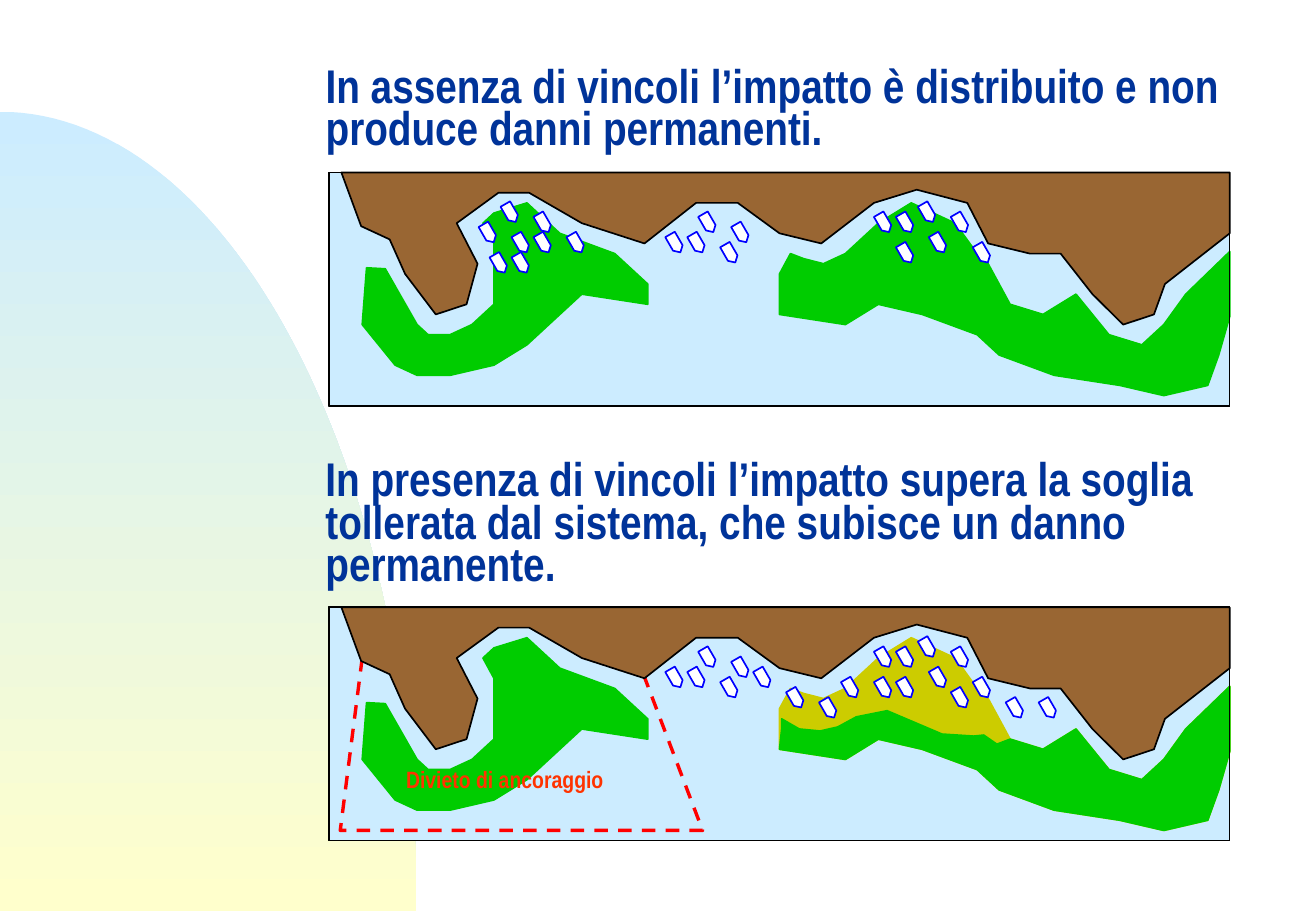
from math import cos, pi, sin

from pptx import Presentation
from pptx.dml.color import RGBColor
from pptx.enum.dml import MSO_LINE
from pptx.enum.shapes import MSO_SHAPE as SHAPE
from pptx.enum.text import MSO_ANCHOR as ANCHOR, MSO_AUTO_SIZE as FIT, PP_ALIGN as ALIGN
from pptx.util import Inches, Pt

color = RGBColor.from_string

PANEL_LEFT, PANEL_WIDTH, PANEL_HEIGHT = 2.71, 7.41, 1.92
COLUMN, ROW = PANEL_WIDTH / 82, PANEL_HEIGHT / 23
BOAT_LENGTH, BOAT_WIDTH = 0.17, 0.09
BLACK, BLUE, WATER, LAND = "000000", "0000FF", "CCECFF", "996633"
GREEN, OLIVE, RED, NAVY = "00CC00", "CCCC00", "FF0000", "003399"

coast = [(1.1, 0), (2.9, 5.3), (5.5, 6.6), (6.9, 10), (9.7, 14), (12.5, 13), (13.5, 9),
         (11.6, 5), (15.4, 2), (18.2, 2), (23, 5), (28.7, 7), (33.4, 3), (37.2, 3),
         (41, 6), (44.8, 7), (49.6, 3), (53.5, 1.7), (58.1, 3), (60, 7), (63.8, 8),
         (66.6, 8), (69.5, 12), (72.3, 15), (75.1, 14), (76.1, 11), (82, 6), (82, 0)]
west_meadow = [(5.1, 9.5), (8, 15), (9, 16), (11, 16), (13, 15), (15, 13), (15, 7), (14, 5),
               (15, 4), (18, 3), (21, 6), (26, 8), (29, 11), (29, 13), (23, 12), (21, 14),
               (18, 17), (15, 19), (11, 20), (8, 20), (6, 19), (3, 15), (3.4, 9.4)]
east_rim = [(41, 14), (47, 15), (50, 13), (54, 14), (59, 16), (61, 18), (66, 20), (72, 21),
            (76, 22), (80, 21), (81, 18), (82, 14.2), (82, 7.8), (78, 12), (76, 15),
            (74, 17), (71, 16), (68, 12), (65, 14), (62, 13)]
bay = [(60, 9), (59, 8), (57, 5), (55, 4), (53, 3), (50, 5), (47, 8), (45, 9), (43.2, 8.5),
       (42, 8), (41, 10)]
damage_edge = [(60.8, 13.5), (59.6, 12.6), (58.7, 12.7), (55.8, 12.5), (50.8, 10.2),
               (48, 10.8), (46.3, 11.8), (44.7, 12.2), (42.8, 12), (41.2, 11), (41.2, 12)]
no_anchor_zone = [(3, 5), (1, 22), (34, 22), (27, 2), (17, 1), (7, 3)]

common_boats = [(34, 5), (31, 7), (33, 7), (37, 6), (36, 8), (50, 5), (55, 7), (57, 5),
                (54, 4), (52, 5), (52, 8), (59, 8)]
free_boats = [(19, 5), (17, 7), (15, 9), (16, 4), (14, 6), (19, 7), (22, 7), (17, 9)]
moved_boats = [(65, 10), (62, 10), (57, 9), (42, 9), (39, 7), (47, 8), (50, 8), (45, 10)]

panels = [
    (1.42, common_boats + free_boats,
     [(east_rim + bay, GREEN, GREEN), (west_meadow, GREEN, GREEN), (coast, LAND, BLACK)]),
    (5, common_boats + moved_boats,
     [(east_rim + bay, OLIVE, OLIVE), (west_meadow, GREEN, GREEN),
      (east_rim + damage_edge, GREEN, GREEN), (no_anchor_zone, None, RED),
      (coast, LAND, BLACK)]),
]


def paint(shape, fill, line, width=1):
    shape.shadow.inherit = False
    if fill:
        shape.fill.solid()
        shape.fill.fore_color.rgb = color(fill)
    else:
        shape.fill.background()
    shape.line.color.rgb = color(line)
    shape.line.width = Pt(width)


def write(box, text, size, ink, align, spacing):
    frame = box.text_frame
    frame.word_wrap = True
    frame.auto_size = FIT.NONE
    frame.vertical_anchor = ANCHOR.MIDDLE
    para = frame.paragraphs[0]
    para.alignment = align
    para.line_spacing = spacing
    span = para.add_run()
    span.text = text
    span.font.name = "Arial Narrow"
    span.font.size = Pt(size)
    span.font.bold = True
    span.font.color.rgb = color(ink)


deck = Presentation()
deck.slide_width, deck.slide_height = Inches(10.83), Inches(7.5)
page = deck.slides.add_slide(deck.slide_layouts[5])
shapes = page.shapes

arc = [(Inches(3.43 * sin(step * pi / 120)), Inches(7.5 - 6.58 * cos(step * pi / 120)))
       for step in range(61)]
builder = shapes.build_freeform(0, Inches(7.5))
builder.add_line_segments(arc, close=True)
hill = builder.convert_to_shape()
hill.shadow.inherit = False
hill.line.fill.background()
hill.fill.gradient()
hill.fill.gradient_angle = 270
for stop, tint in zip(hill.fill.gradient_stops, (WATER, "FFFFCC")):
    stop.color.rgb = color(tint)

title = shapes.title
title.left, title.top, title.width, title.height = map(Inches, (2.58, 0.42, 7.67, 1))
write(title, "In assenza di vincoli l’impatto è distribuito e non produce danni permanenti.",
      28, NAVY, ALIGN.LEFT, 0.75)
caption = shapes.add_textbox(*map(Inches, (2.58, 3.75, 7.4, 1.17)))
write(caption, "In presenza di vincoli l’impatto supera la soglia tollerata dal sistema, "
      "che subisce un danno permanente.", 28, NAVY, ALIGN.LEFT, 0.75)

for top, boats, outlines in panels:
    bounds = [Inches(n) for n in (PANEL_LEFT, top, PANEL_WIDTH, PANEL_HEIGHT)]
    paint(shapes.add_shape(SHAPE.RECTANGLE, *bounds), WATER, BLACK)
    for cells, fill, line in outlines:
        points = [(Inches(PANEL_LEFT + col * COLUMN), Inches(top + row * ROW))
                  for col, row in cells]
        builder = shapes.build_freeform(*points[0])
        builder.add_line_segments(points[1:], close=True)
        region = builder.convert_to_shape()
        paint(region, fill, line, 1 if fill else 2)
        if not fill:
            region.line.dash_style = MSO_LINE.DASH
    paint(shapes.add_shape(SHAPE.RECTANGLE, *bounds), None, BLACK)
    for col, row in boats:
        left = PANEL_LEFT + (col + 0.5) * COLUMN - BOAT_LENGTH / 2
        boat = shapes.add_shape(SHAPE.PENTAGON, Inches(left),
                                Inches(top + row * ROW - BOAT_WIDTH / 2),
                                Inches(BOAT_LENGTH), Inches(BOAT_WIDTH))
        boat.rotation = 60
        boat.adjustments[0] = 0.46
        paint(boat, "FFFFFF", BLUE)

label = shapes.add_textbox(*map(Inches, (3.07, 6.25, 2.17, 0.33)))
write(label, "Divieto di ancoraggio", 14, "FF3300", ALIGN.CENTER, 1)

deck.save("out.pptx")
